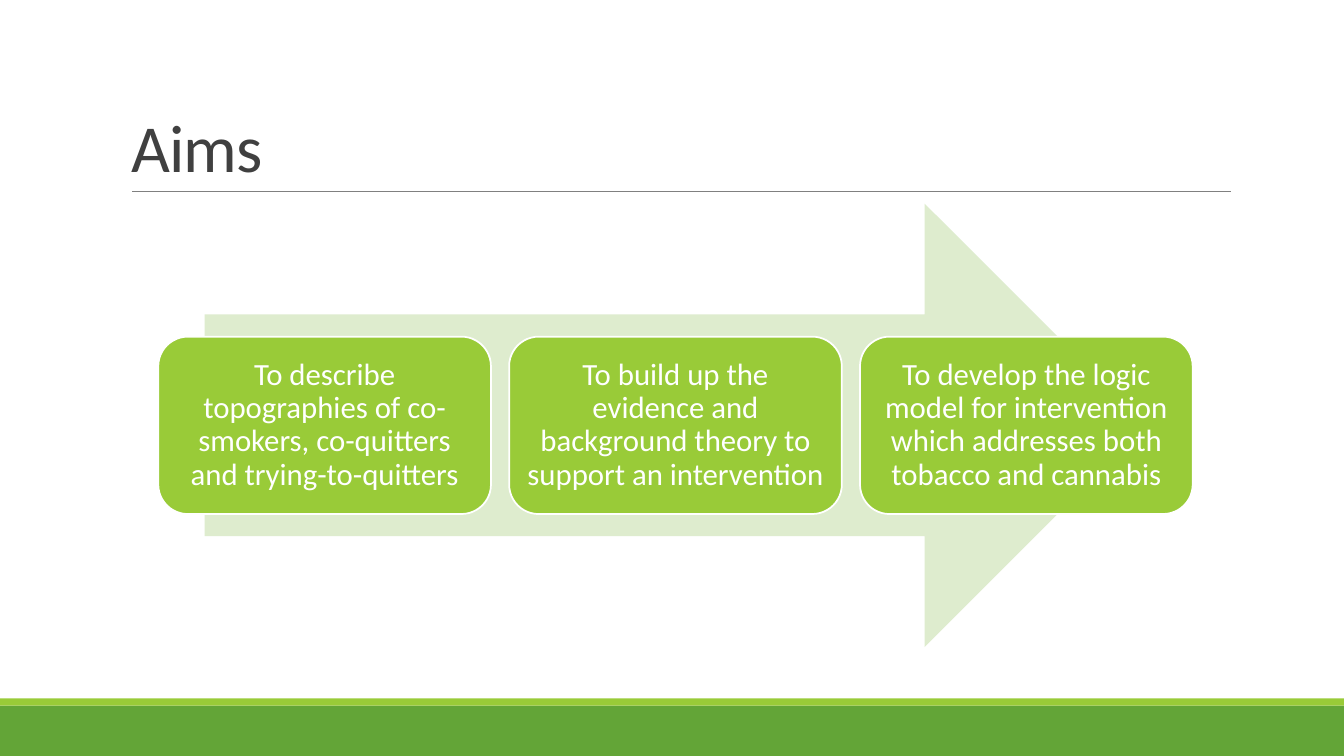
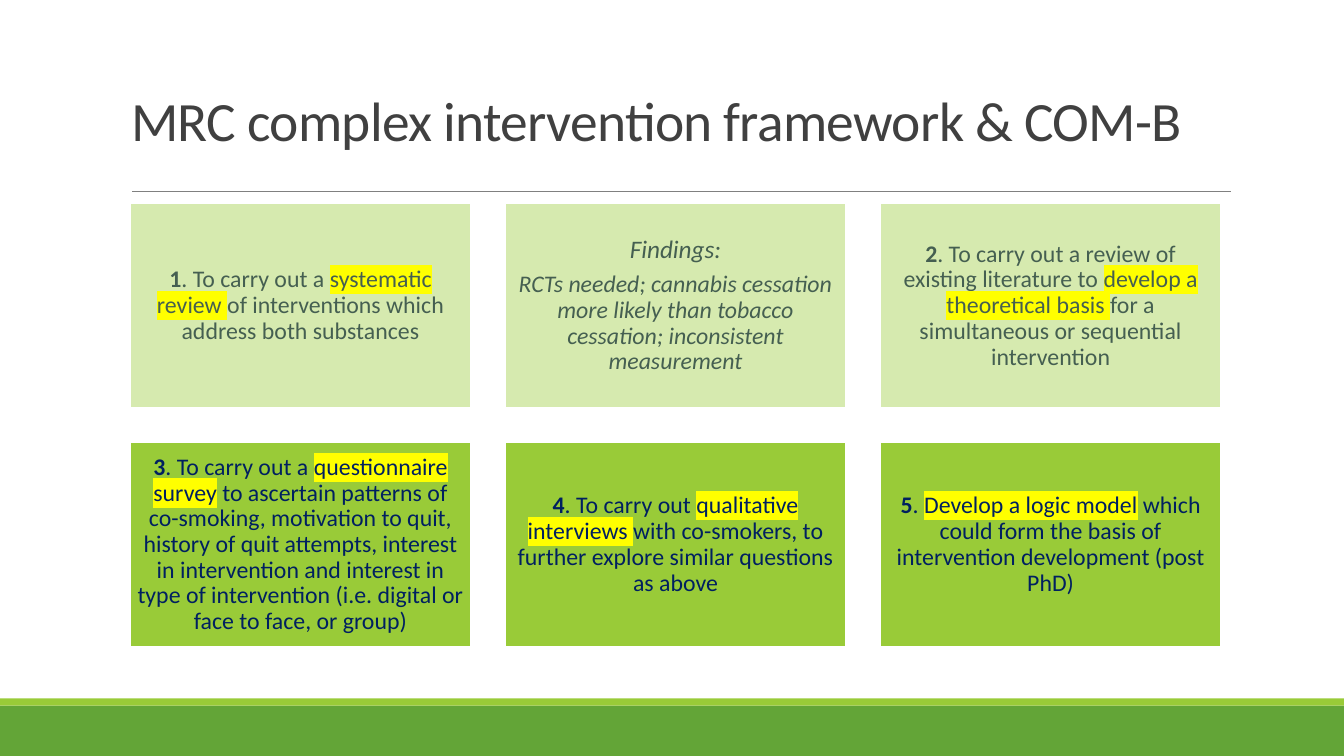
from lxml.etree import SubElement
from pptx import Presentation
from pptx.dml.color import RGBColor
from pptx.enum.shapes import MSO_CONNECTOR, MSO_SHAPE
from pptx.enum.text import MSO_ANCHOR, MSO_AUTO_SIZE, PP_ALIGN
from pptx.oxml import parse_xml
from pptx.oxml.ns import nsdecls, qn
from pptx.util import Inches, Pt

FONT = "Calibri"
WHITE = "FFFFFF"
LIME = "99CB38"
GREEN = "63A537"
PALE_LIME = "D6EAAF"
PALE_GREEN = "DEECCE"
GREY = "808080"
TITLE_GREY = "404040"
DARK_GREEN = "455F51"
NAVY = "002060"
YELLOW = "FFFF00"

AIMS = [
    "To describe topographies of co-smokers, co-quitters and trying-to-quitters",
    "To build up the evidence and background theory to support an intervention",
    "To develop the logic model for intervention which addresses both tobacco and cannabis",
]

STEPS = [
    [[("1", "bold"), (". To carry out a ", ""), ("systematic review ", "mark"),
      ("of interventions which address both substances", "")]],
    [[("Findings:", "heading")],
     [("RCTs needed; cannabis cessation more likely than tobacco cessation; "
       "inconsistent measurement", "italic")]],
    [[("2", "bold"), (". To carry out a review of existing literature to ", ""),
      ("develop a theoretical basis ", "mark"),
      ("for a simultaneous or sequential intervention", "")]],
    [[("3", "bold"), (". To carry out a ", ""), ("questionnaire survey", "mark"),
      (" to ascertain patterns of co-smoking, motivation to quit, history of quit attempts, "
       "interest in intervention and interest in type of intervention "
       "(i.e. digital or face to face, or group)", "")]],
    [[("4", "bold"), (". To carry out ", ""), ("qualitative interviews ", "mark"),
      ("with co-smokers, to further explore similar questions as above", "")]],
    [[("5", "bold"), (". ", ""), ("Develop a logic model", "mark"),
      (" which could form the basis of intervention development (post PhD)", "")]],
]


def rgb(value):
    """Turn a hex string into a colour."""
    return RGBColor.from_string(value)


def place(sp, left, top, width, height):
    """Set a shape's box in inches."""
    sp.left, sp.top = Inches(left), Inches(top)
    sp.width, sp.height = Inches(width), Inches(height)


def add_block(s, kind, box, fill, line=None):
    """Add a flat preset shape."""
    sp = s.shapes.add_shape(kind, *[Inches(v) for v in box])
    sp.shadow.inherit = False
    sp.fill.solid()
    sp.fill.fore_color.rgb = rgb(fill)
    if line:
        sp.line.color.rgb = rgb(line)
        sp.line.width = Pt(1.25)
    else:
        sp.line.fill.background()
    return sp


def add_run(p, text, size, color, style=""):
    """Add one run in the given style."""
    r = p.add_run()
    r.text = text
    r.font.size = Pt(size)
    r.font.name = FONT
    r.font.color.rgb = rgb(color)
    if style == "bold":
        r.font.bold = True
    if style in ("italic", "heading"):
        r.font.italic = True
    if style == "mark":
        mark = parse_xml(f'<a:highlight {nsdecls("a")}><a:srgbClr val="{YELLOW}"/></a:highlight>')
        r.font.fill._xPr.find(qn("a:solidFill")).addnext(mark)
    return r


def fill_text(sp, paragraphs, size, color, inset):
    """Write centred paragraphs of styled runs into a shape."""
    tf = sp.text_frame
    tf.word_wrap = True
    tf.vertical_anchor = MSO_ANCHOR.MIDDLE
    tf.margin_left = tf.margin_right = tf.margin_top = tf.margin_bottom = Inches(inset)
    for i, runs in enumerate(paragraphs):
        p = tf.add_paragraph() if i else tf.paragraphs[0]
        p.alignment = PP_ALIGN.CENTER
        p.line_spacing = 0.9
        p.space_after = Pt(6)
        for text, style in runs:
            add_run(p, text, size + (style == "heading"), color, style)


def add_frame(s):
    """Put the footer bands and title rule on the slide's layout."""
    bands = [
        add_block(s, MSO_SHAPE.RECTANGLE, (0, 7, 13.33, 0.5), GREEN),
        add_block(s, MSO_SHAPE.RECTANGLE, (0, 6.93, 13.33, 0.07), LIME),
    ]
    rule = s.shapes.add_connector(
        MSO_CONNECTOR.STRAIGHT, Inches(1.31), Inches(1.9), Inches(12.21), Inches(1.9))
    rule.line.color.rgb = rgb(GREY)
    rule.line.width = Pt(0.5)
    SubElement(rule.element.spPr, qn("a:effectLst"))
    for sp in bands + [rule]:
        s.slide_layout.shapes.element.append(sp.element)


def add_title(s, text, size, box):
    """Fill and place the title placeholder."""
    sp = s.shapes.title
    place(sp, *box)
    tf = sp.text_frame
    tf.word_wrap = True
    tf.auto_size = MSO_AUTO_SIZE.NONE
    tf.vertical_anchor = MSO_ANCHOR.BOTTOM
    p = tf.paragraphs[0]
    p.alignment = PP_ALIGN.LEFT
    p.line_spacing = 0.85
    r = add_run(p, text, size, TITLE_GREY)
    r.font._element.set("spc", "-50")


def add_aims(s, left, top, width, height):
    """Draw the arrow with the aims in a row across it."""
    arrow_width = 0.85 * width + 0.62
    add_block(s, MSO_SHAPE.RIGHT_ARROW,
              (left + (width - arrow_width) / 2, top, arrow_width, height), PALE_GREEN)
    gap = 0.18
    card_width = (width - gap * (len(AIMS) - 1)) / len(AIMS)
    card_height = 0.4 * height
    for i, aim in enumerate(AIMS):
        box = (left + i * (card_width + gap), top + (height - card_height) / 2,
               card_width, card_height)
        sp = add_block(s, MSO_SHAPE.ROUNDED_RECTANGLE, box, LIME, WHITE)
        fill_text(sp, [[(aim, "")]], 22, WHITE, 0.09)


def add_steps(s, left, top, width, height):
    """Draw the steps as a grid, with the finished row pale."""
    cols, rows, gap = 3, 2, 0.34
    card_width = (width - gap * (cols - 1)) / cols
    card_height = (height - gap * (rows - 1)) / rows
    row_colors = [(PALE_LIME, DARK_GREEN), (LIME, NAVY)]
    for i, paragraphs in enumerate(STEPS):
        row, col = divmod(i, cols)
        fill, color = row_colors[row]
        box = (left + col * (card_width + gap), top + row * (card_height + gap),
               card_width, card_height)
        sp = add_block(s, MSO_SHAPE.RECTANGLE, box, fill, WHITE)
        fill_text(sp, paragraphs, 17, color, 0.07)


def main():
    """Build and save the slides."""
    prs = Presentation()
    prs.slide_width, prs.slide_height = Inches(13.33), Inches(7.5)
    layout = prs.slide_layouts[5]

    s = prs.slides.add_slide(layout)
    add_frame(s)
    add_title(s, "Aims", 48, (1.2, 0.31, 11, 1.59))
    add_aims(s, 1.57, 2.02, 10.26, 4.4)

    s = prs.slides.add_slide(layout)
    add_title(s, "MRC complex intervention framework & COM-B", 39.6, (1.2, 0.5, 11, 1.07))
    add_steps(s, 1.29, 2.02, 10.82, 4.4)

    prs.save("out.pptx")


if __name__ == "__main__":
    main()
